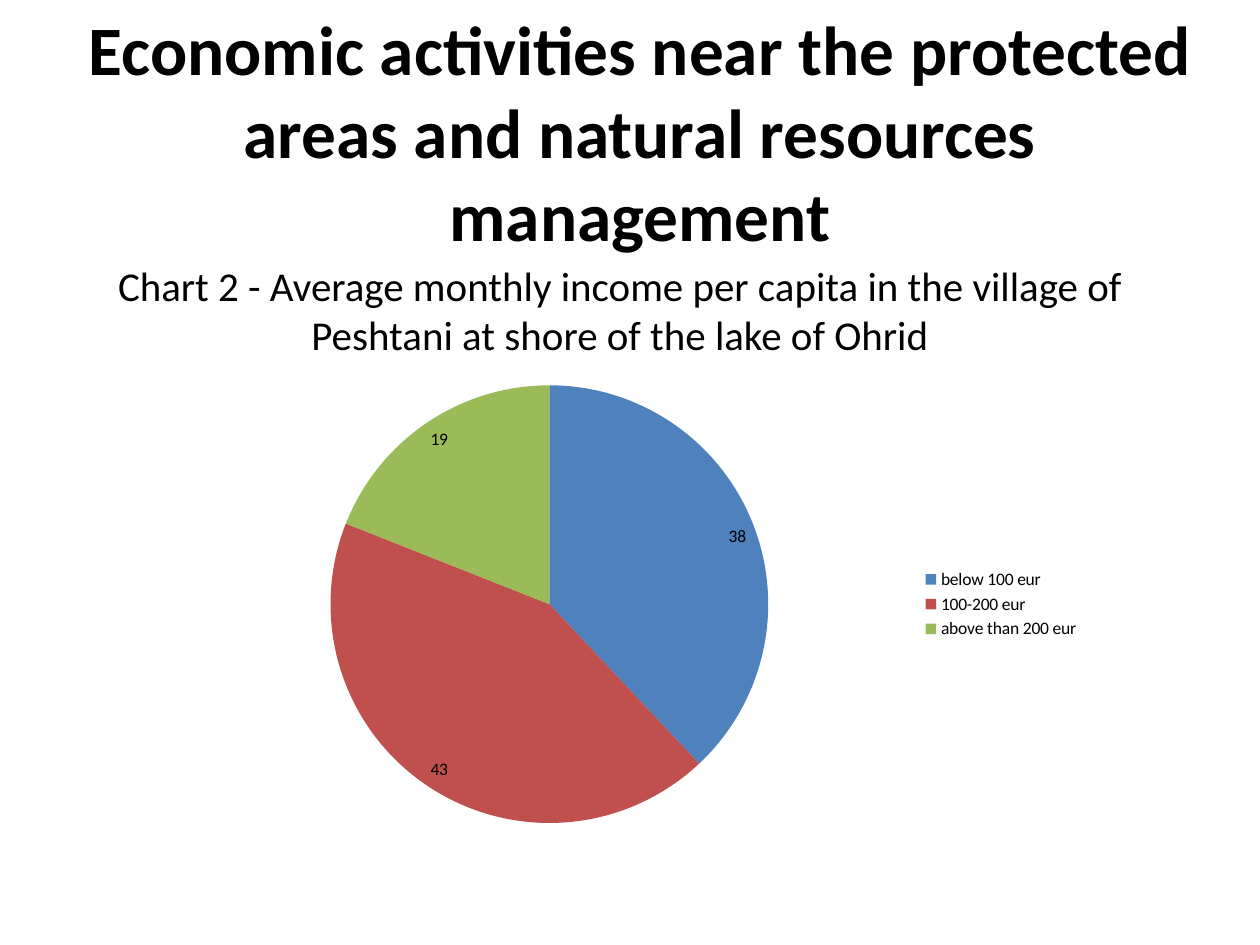
import pptx
import pptx.util
import pptx.dml.color
import pptx.enum.text
import pptx.enum.chart
import pptx.chart.data

Inches = pptx.util.Inches
Pt = pptx.util.Pt
RGBColor = pptx.dml.color.RGBColor

BLACK = RGBColor(0x00, 0x00, 0x00)
BLUE = RGBColor(0x4F, 0x81, 0xBD)
RED = RGBColor(0xC0, 0x50, 0x4D)
GREEN = RGBColor(0x9B, 0xBB, 0x59)
FACE = "Calibri"


def style(font, size, bold=False):
    font.name = FACE
    font.size = Pt(size)
    font.bold = bold
    font.color.rgb = BLACK


def add_head(slide, box, text, size, bold=False):
    frame = slide.shapes.add_textbox(*box).text_frame
    frame.word_wrap = True
    frame.vertical_anchor = pptx.enum.text.MSO_ANCHOR.MIDDLE
    frame.margin_top = 0
    frame.margin_bottom = Inches(0.67)
    frame.text = text
    para = frame.paragraphs[0]
    para.alignment = pptx.enum.text.PP_ALIGN.CENTER
    style(para.runs[0].font, size, bold)


def add_pie(slide, box):
    data = pptx.chart.data.CategoryChartData()
    data.categories = ["below 100 eur", "100-200 eur", "above than 200 eur"]
    data.add_series("Series 1", [38, 43, 19])
    kind = pptx.enum.chart.XL_CHART_TYPE.PIE
    chart = slide.shapes.add_chart(kind, *box, data).chart
    style(chart.font, 10)
    chart.has_title = False
    chart.has_legend = True
    chart.legend.position = pptx.enum.chart.XL_LEGEND_POSITION.RIGHT
    chart.legend.include_in_layout = False

    plot = chart.plots[0]
    plot.vary_by_categories = True
    plot.has_data_labels = True
    labels = plot.data_labels
    labels.show_value = True
    labels.show_percentage = False
    labels.position = pptx.enum.chart.XL_LABEL_POSITION.INSIDE_END
    for index, color in enumerate([BLUE, RED, GREEN]):
        fill = plot.series[0].points[index].format.fill
        fill.solid()
        fill.fore_color.rgb = color


def main():
    deck = pptx.Presentation()
    deck.slide_width = Inches(10)
    deck.slide_height = Inches(7.5)
    slide = deck.slides.add_slide(deck.slide_layouts[6])
    add_head(
        slide,
        (Inches(0.58), Inches(0.75), Inches(9), Inches(1.25)),
        "Economic activities near the protected areas and natural resources management",
        39.6,
        True,
    )
    add_head(
        slide,
        (Inches(0.42), Inches(2.33), Inches(9), Inches(0.92)),
        "Chart 2 - Average monthly income per capita in the village of "
        "Peshtani at shore of the lake of Ohrid",
        23.4,
    )
    add_pie(slide, (Inches(1.42), Inches(2.92), Inches(7.25), Inches(3.75)))
    deck.save("out.pptx")


if __name__ == "__main__":
    main()
